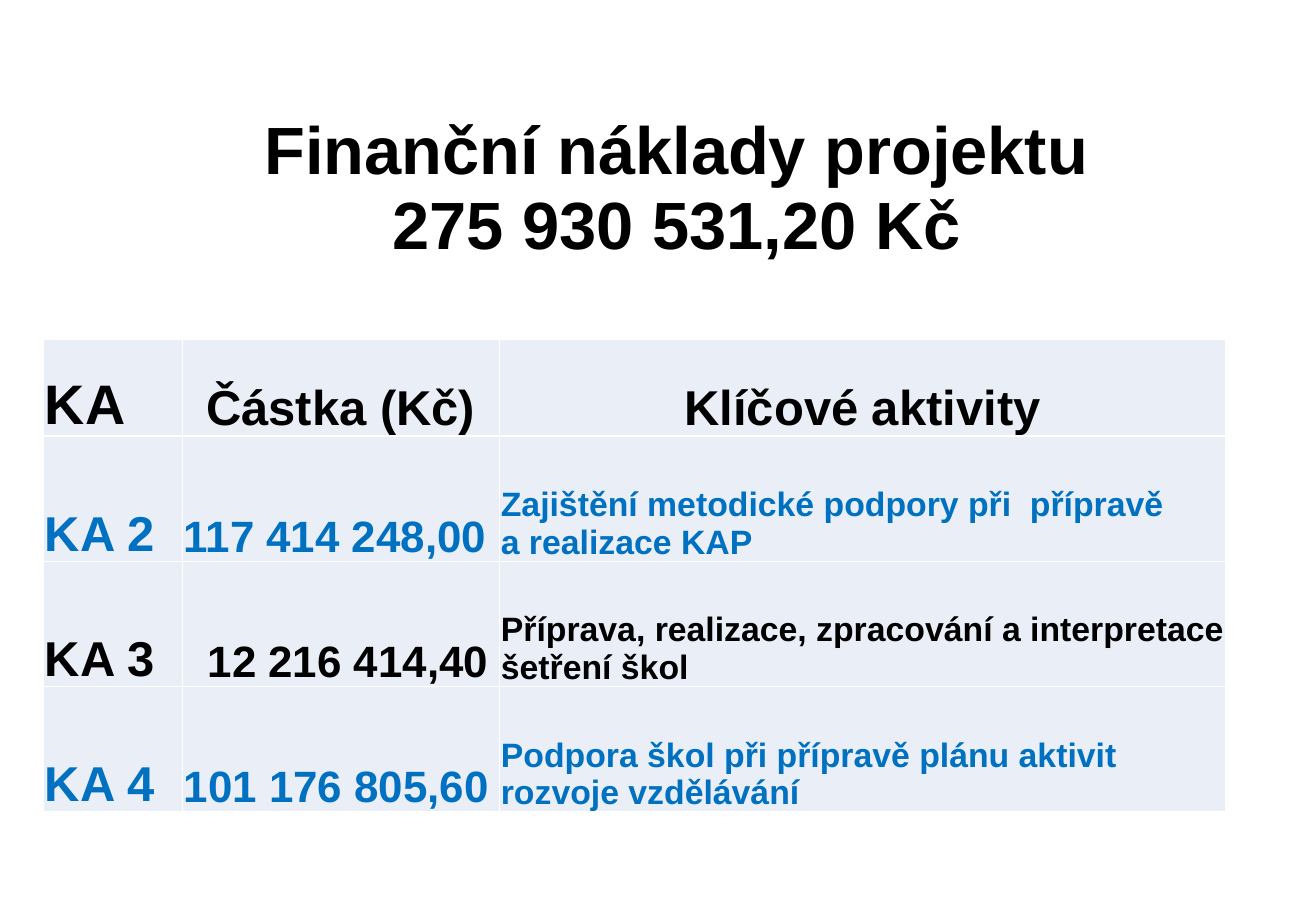
from lxml import etree
from pptx import Presentation
from pptx.dml.color import RGBColor
from pptx.enum.text import MSO_ANCHOR, PP_ALIGN
from pptx.oxml.ns import qn
from pptx.util import Cm, Pt

BLACK = RGBColor(0x00, 0x00, 0x00)
BLUE = RGBColor(0x00, 0x70, 0xC0)
PALE_BLUE = RGBColor(0xEA, 0xEF, 0xF7)
WHITE = RGBColor(0xFF, 0xFF, 0xFF)


def write_text(paragraph, text, size, color, alignment):
    paragraph.text = text
    paragraph.alignment = alignment
    font_format = {"name": "Arial", "size": Pt(size), "bold": True}
    for run in paragraph.runs:
        for name, value in font_format.items():
            setattr(run.font, name, value)
        run.font.color.rgb = color


def add_borders(cell):
    properties = cell._tc.get_or_add_tcPr()
    for position, side in enumerate(("lnL", "lnR", "lnT", "lnB")):
        line = etree.Element(qn(f"a:{side}"), w=str(Pt(1)))
        fill = etree.SubElement(line, qn("a:solidFill"))
        etree.SubElement(fill, qn("a:srgbClr"), val=str(WHITE))
        properties.insert(position, line)


presentation = Presentation()
presentation.slide_width = Cm(27.51)
presentation.slide_height = Cm(19.05)
slide = presentation.slides.add_slide(presentation.slide_layouts[6])

title = slide.shapes.add_textbox(Cm(4.27), Cm(0.79), Cm(19.76), Cm(5.74))
title_format = {
    "word_wrap": True,
    "vertical_anchor": MSO_ANCHOR.MIDDLE,
    "margin_top": Cm(0.74),
    "margin_bottom": Cm(0.13),
}
for name, value in title_format.items():
    setattr(title.text_frame, name, value)
title_paragraph = title.text_frame.paragraphs[0]
title_paragraph.line_spacing = 0.93
write_text(title_paragraph, "Finanční náklady projektu\v275 930 531,20 Kč", 39.6, BLACK, PP_ALIGN.CENTER)

rows = [
    ("KA", "Částka (Kč)", "Klíčové aktivity"),
    ("KA 2", "117 414 248,00", "Zajištění metodické podpory při  přípravě \va realizace KAP"),
    ("KA 3", "12 216 414,40", "Příprava, realizace, zpracování a interpretace šetření škol"),
    ("KA 4", "101 176 805,60", "Podpora škol při přípravě plánu aktivit rozvoje vzdělávání"),
]
header_sizes = (33, 29, 29)
body_sizes = (29, 26, 20)
header_alignments = (PP_ALIGN.LEFT, PP_ALIGN.CENTER, PP_ALIGN.CENTER)
row_colors = (BLACK, BLUE, BLACK, BLUE)
column_widths = (2.9, 6.63, 15.19)
row_heights = (2.03, 2.62, 2.62, 2.62)

table = slide.shapes.add_table(
    len(rows), len(column_widths), Cm(0.91), Cm(7.09), Cm(sum(column_widths)), Cm(sum(row_heights))
).table
table.first_row = False
table.horz_banding = False
for column, width in zip(table.columns, column_widths):
    column.width = Cm(width)

cell_format = {
    "vertical_anchor": MSO_ANCHOR.BOTTOM,
    "margin_left": Cm(0.03),
    "margin_right": Cm(0.03),
    "margin_top": Cm(0.03),
    "margin_bottom": 0,
}
for row_index, texts in enumerate(rows):
    table.rows[row_index].height = Cm(row_heights[row_index])
    for column_index, text in enumerate(texts):
        cell = table.cell(row_index, column_index)
        for name, value in cell_format.items():
            setattr(cell, name, value)
        cell.fill.solid()
        cell.fill.fore_color.rgb = PALE_BLUE
        add_borders(cell)
        is_header = row_index == 0
        size = (header_sizes if is_header else body_sizes)[column_index]
        alignment = header_alignments[column_index] if is_header else PP_ALIGN.LEFT
        write_text(cell.text_frame.paragraphs[0], text, size, row_colors[row_index], alignment)

table.cell(2, 1).margin_left = Cm(0.53)

presentation.save("out.pptx")
